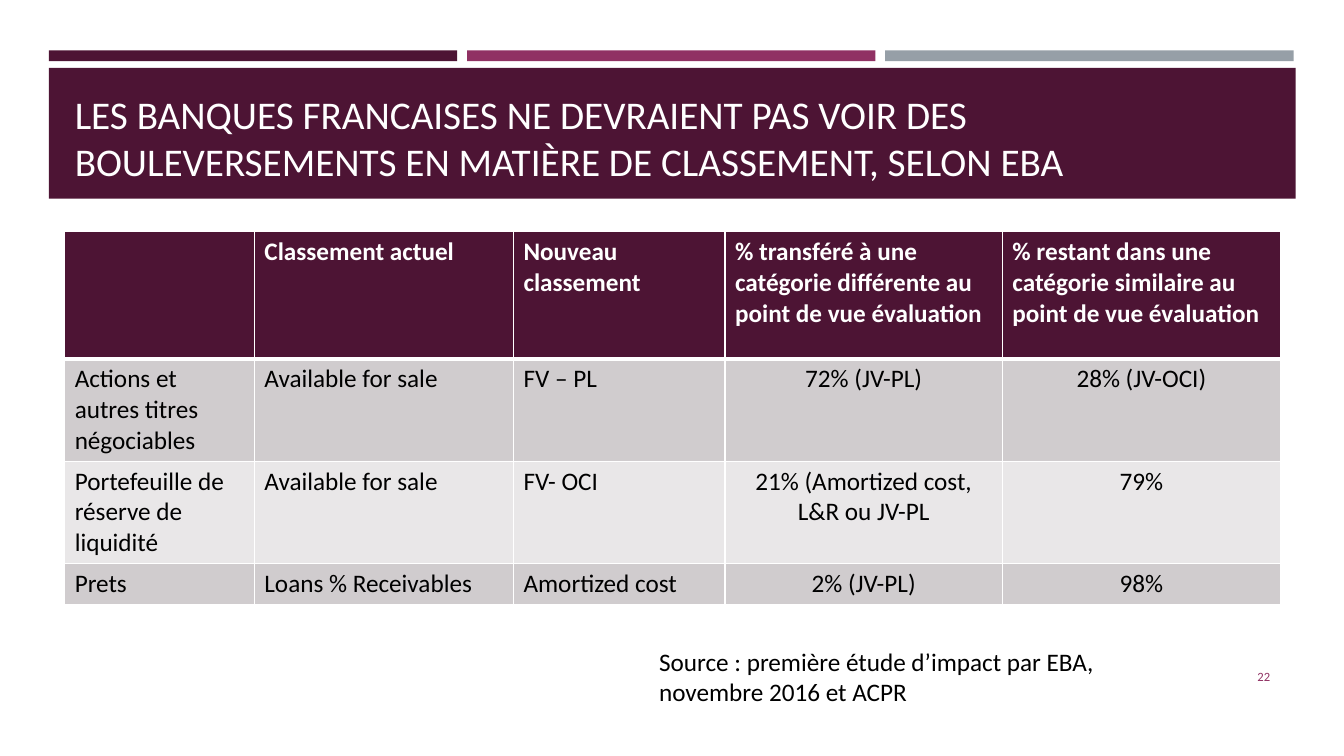
from lxml import etree
from pptx import Presentation
from pptx.dml.color import RGBColor
from pptx.enum.shapes import MSO_SHAPE
from pptx.enum.text import MSO_ANCHOR, MSO_AUTO_SIZE, PP_ALIGN
from pptx.oxml.ns import qn
from pptx.util import Cm, Pt

LEFT, CENTER, RIGHT = PP_ALIGN.LEFT, PP_ALIGN.CENTER, PP_ALIGN.RIGHT
TOP, MIDDLE, BOTTOM = MSO_ANCHOR.TOP, MSO_ANCHOR.MIDDLE, MSO_ANCHOR.BOTTOM
RECTANGLE = MSO_SHAPE.RECTANGLE

PLUM = RGBColor(0x4D, 0x14, 0x34)
MAGENTA = RGBColor(0x90, 0x31, 0x63)
STEEL = RGBColor(0x96, 0x9F, 0xA7)
DARK_BAND = RGBColor(0xD0, 0xCC, 0xCE)
LIGHT_BAND = RGBColor(0xE9, 0xE7, 0xE8)
WHITE = RGBColor(0xFF, 0xFF, 0xFF)
BLACK = RGBColor(0, 0, 0)

TITLE = ("LES BANQUES FRANCAISES NE DEVRAIENT PAS VOIR DES "
         "BOULEVERSEMENTS EN MATIÈRE DE CLASSEMENT, SELON EBA")
CLASSIFICATION = [
    ("", "Classement actuel", "Nouveau classement",
     "% transféré à une catégorie différente au point de vue évaluation",
     "% restant dans une catégorie similaire au point de vue évaluation"),
    ("Actions et autres titres négociables", "Available for sale", "FV – PL",
     "72% (JV-PL)", "28% (JV-OCI)"),
    ("Portefeuille de réserve de liquidité", "Available for sale", "FV- OCI",
     "21% (Amortized cost, L&R ou JV-PL", "79%"),
    ("Prets", "Loans % Receivables", "Amortized cost", "2% (JV-PL)", "98%"),
]
SOURCE = ["Source : première étude d’impact par EBA,", "novembre 2016 et ACPR"]
PAGE_NUMBER = "22"

COLUMN_WIDTHS = (4.78, 6.53, 5.33, 6.99, 7.01)
ROW_HEIGHTS = (3.2, 2.58, 2.58, 1.03)
FIRST_CENTERED_COLUMN = 3
MARGIN, CONTENT_WIDTH = 1.63, 30.63
BAND_LEFT, BAND_WIDTH = 1.23, 31.42
STRIPE_WIDTH, STRIPE_STEP = 10.29, 10.54


def write(frame, lines, size=18, color=BLACK, bold=False, align=LEFT, anchor=TOP):
    frame.word_wrap = True
    frame.vertical_anchor = anchor
    for index, line in enumerate(lines):
        paragraph = frame.paragraphs[0] if index == 0 else frame.add_paragraph()
        paragraph.alignment = align
        run = paragraph.add_run()
        run.text = line
        run.font.name = "Calibri"
        run.font.size = Pt(size)
        run.font.bold = bold
        run.font.color.rgb = color


def add_bar(slide, left, top, width, height, color):
    """Add a filled rectangle behind the title."""
    bar = slide.shapes.add_shape(RECTANGLE, Cm(left), Cm(top), Cm(width), Cm(height))
    bar.shadow.inherit = False
    bar.fill.solid()
    bar.fill.fore_color.rgb = color
    bar.line.fill.background()
    slide.shapes.title.element.addprevious(bar.element)


def add_text_box(slide, left, top, width, height, lines, **text_format):
    box = slide.shapes.add_textbox(Cm(left), Cm(top), Cm(width), Cm(height))
    write(box.text_frame, lines, **text_format)


def set_borders(cell, **widths):
    """Draw white cell edges; widths in points are keyed L, R, T and B."""
    properties = cell._tc.get_or_add_tcPr()
    for side, width in widths.items():
        edge = etree.SubElement(properties, qn(f"a:ln{side}"), w=str(Pt(width)))
        fill = etree.SubElement(edge, qn("a:solidFill"))
        etree.SubElement(fill, qn("a:srgbClr"), val=str(WHITE))


def add_classification_table(slide):
    table = slide.shapes.add_table(
        len(CLASSIFICATION), len(COLUMN_WIDTHS), Cm(MARGIN), Cm(5.84),
        Cm(CONTENT_WIDTH), Cm(sum(ROW_HEIGHTS))).table
    table.horz_banding = False
    for column, width in zip(table.columns, COLUMN_WIDTHS):
        column.width = Cm(width)
    for row, height in zip(table.rows, ROW_HEIGHTS):
        row.height = Cm(height)

    for r, entries in enumerate(CLASSIFICATION):
        header = r == 0
        background = PLUM if header else DARK_BAND if r % 2 else LIGHT_BAND
        for c, entry in enumerate(entries):
            cell = table.cell(r, c)
            set_borders(cell, L=1, R=1, T=3 if r == 1 else 1, B=3 if header else 1)
            cell.fill.solid()
            cell.fill.fore_color.rgb = background
            centered = not header and c >= FIRST_CENTERED_COLUMN
            if entry:
                write(cell.text_frame, [entry], color=WHITE if header else BLACK,
                      bold=header, align=CENTER if centered else LEFT)


def main():
    deck = Presentation()
    deck.slide_width, deck.slide_height = Cm(33.87), Cm(19.05)
    slide = deck.slides.add_slide(deck.slide_layouts[5])

    for index, color in enumerate((PLUM, MAGENTA, STEEL)):
        add_bar(slide, BAND_LEFT + index * STRIPE_STEP, 1.27, STRIPE_WIDTH, 0.27, color)
    add_bar(slide, BAND_LEFT, 1.71, BAND_WIDTH, 3.3, PLUM)

    title = slide.shapes.title
    title.left, title.top = Cm(MARGIN), Cm(1.96)
    title.width, title.height = Cm(CONTENT_WIDTH), Cm(2.82)
    write(title.text_frame, [TITLE], size=28, color=WHITE, anchor=BOTTOM)
    title.text_frame.auto_size = MSO_AUTO_SIZE.NONE

    add_classification_table(slide)
    add_text_box(slide, 16.36, 16.15, 14.12, 1.8, SOURCE)
    add_text_box(slide, 29.34, 16.54, 2.92, 1.02, [PAGE_NUMBER],
                 size=9, color=MAGENTA, align=RIGHT, anchor=MIDDLE)
    deck.save("out.pptx")


if __name__ == "__main__":
    main()
